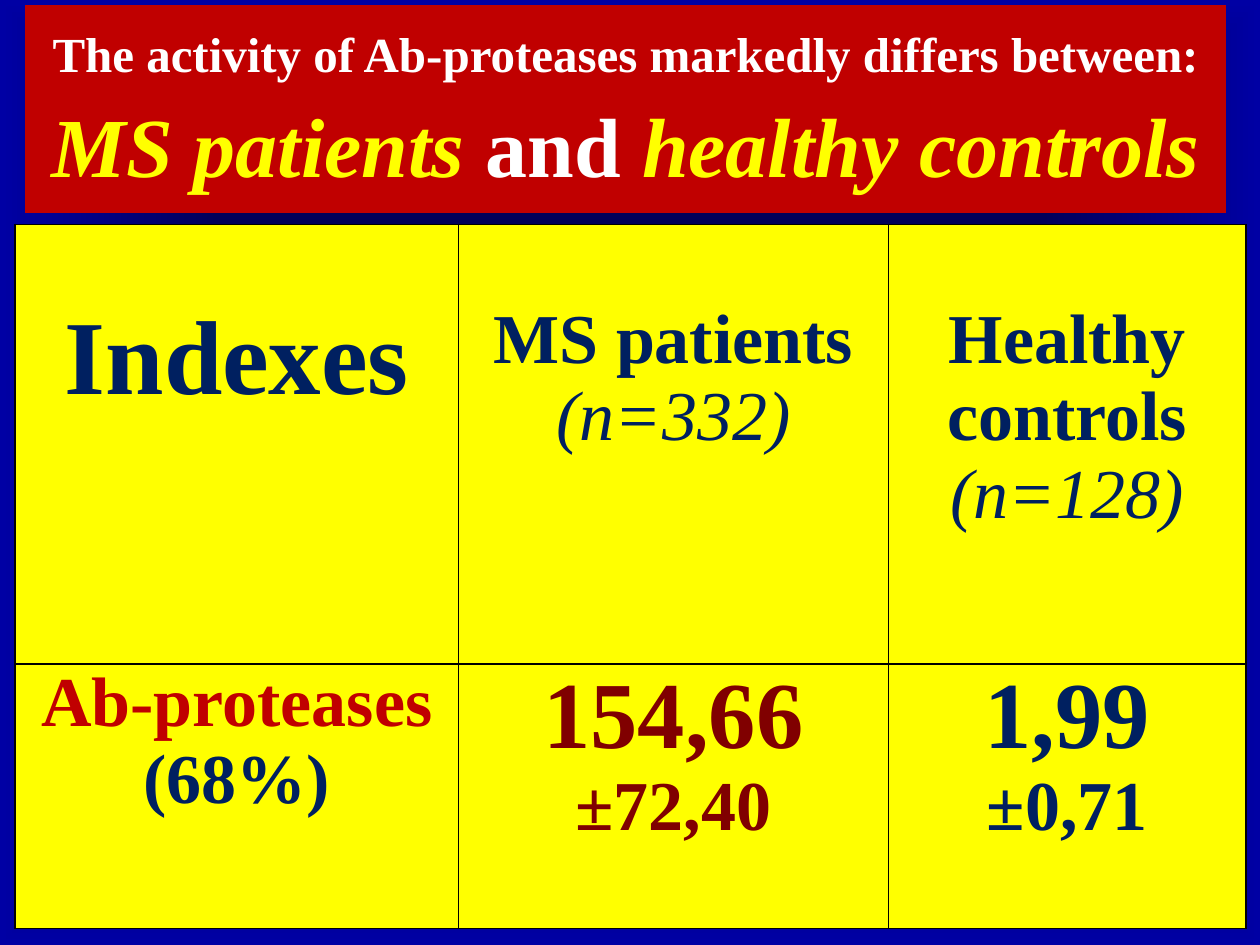
"""Build a slide comparing Ab-protease activity in two groups."""
import pptx
import pptx.util
import pptx.dml.color
import pptx.enum.text
import pptx.oxml
import pptx.oxml.ns
from lxml import etree

FONT = "Times New Roman"
HUES = {"black": "000000", "blue": "0000A4", "red": "C00000", "white": "FFFFFF",
        "yellow": "FFFF00", "navy": "002060", "maroon": "800000"}

HEAD = [
    [("The activity of Ab-proteases markedly differs between:", 28, "white", "b")],
    [("MS patients ", 48, "yellow", "bi"), ("and ", 48, "white", "b"),
     ("healthy controls", 48, "yellow", "bi")],
]
ROWS = [
    [
        [[("Indexes", 60, "navy", "b")]],
        [[("MS patients", 40, "navy", "b")], [("(n=332)", 40, "navy", "i")]],
        [[("Healthy controls", 40, "navy", "b")], [("(n=128)", 40, "navy", "i")]],
    ],
    [
        [[("Ab-proteases", 40, "red", "b")], [("(68%)", 40, "navy", "b")]],
        [[("154,66", 54, "maroon", "b")], [("±72,40", 40, "maroon", "b")]],
        [[("1,99", 54, "navy", "b")], [("±0,71", 40, "navy", "b")]],
    ],
]
WIDTHS = [3.52, 3.41, 2.84]
HEIGHTS = [3.49, 2.1]
TOPS = [0.61, 0]
INCH = pptx.util.Inches


def hue(name):
    return pptx.dml.color.RGBColor.from_string(HUES[name])


def paint(fill, name):
    fill.solid()
    fill.fore_color.rgb = hue(name)


def write(frame, paras, gap=0):
    for i, runs in enumerate(paras):
        para = frame.paragraphs[0] if i == 0 else frame.add_paragraph()
        para.alignment = pptx.enum.text.PP_ALIGN.CENTER
        para.space_before = pptx.util.Pt(gap if i else 0)
        for text, size, color, style in runs:
            run = para.add_run()
            run.text = text
            font = run.font
            font.name, font.size = FONT, pptx.util.Pt(size)
            font.bold, font.italic = "b" in style, "i" in style
            font.color.rgb = hue(color)


def border(cell):
    props = cell._tc.get_or_add_tcPr()
    for side in ("lnL", "lnR", "lnT", "lnB"):
        line = etree.SubElement(props, pptx.oxml.ns.qn("a:" + side), w="12700")
        fill = etree.SubElement(line, pptx.oxml.ns.qn("a:solidFill"))
        etree.SubElement(fill, pptx.oxml.ns.qn("a:srgbClr"), val=HUES["black"])


def backdrop(slide):
    fill = slide.background.fill
    fill.gradient()
    for stop, name in zip(fill.gradient_stops, ("black", "blue")):
        stop.color.rgb = hue(name)
    lin = slide.background._cSld.find(".//" + pptx.oxml.ns.qn("a:lin"))
    lin.getparent().replace(lin, pptx.oxml.parse_xml(
        f'<a:path {pptx.oxml.ns.nsdecls("a")} path="shape">'
        '<a:fillToRect l="50000" t="50000" r="50000" b="50000"/></a:path>'))


def heading(slide):
    title = slide.shapes.title
    title.left, title.top, title.width, title.height = map(INCH, (0.2, 0.04, 9.53, 1.65))
    paint(title.fill, "red")
    frame = title.text_frame
    frame.auto_size = pptx.enum.text.MSO_AUTO_SIZE.NONE
    frame.vertical_anchor = pptx.enum.text.MSO_ANCHOR.TOP
    frame.margin_top = INCH(0.15)
    write(frame, HEAD, 6)


def grid(slide):
    box = map(INCH, (0.12, 1.78, sum(WIDTHS), sum(HEIGHTS)))
    table = slide.shapes.add_table(len(ROWS), len(WIDTHS), *box).table
    for col, width in zip(table.columns, WIDTHS):
        col.width = INCH(width)
    for r, row in enumerate(ROWS):
        table.rows[r].height = INCH(HEIGHTS[r])
        for c, paras in enumerate(row):
            cell = table.cell(r, c)
            border(cell)
            paint(cell.fill, "yellow")
            cell.margin_left = cell.margin_right = INCH(0.07)
            cell.margin_top, cell.margin_bottom = INCH(TOPS[r]), 0
            write(cell.text_frame, paras)


def main():
    deck = pptx.Presentation()
    deck.slide_width, deck.slide_height = INCH(10), INCH(7.5)
    slide = deck.slides.add_slide(deck.slide_layouts[5])
    backdrop(slide)
    heading(slide)
    grid(slide)
    deck.save("out.pptx")


if __name__ == "__main__":
    main()
